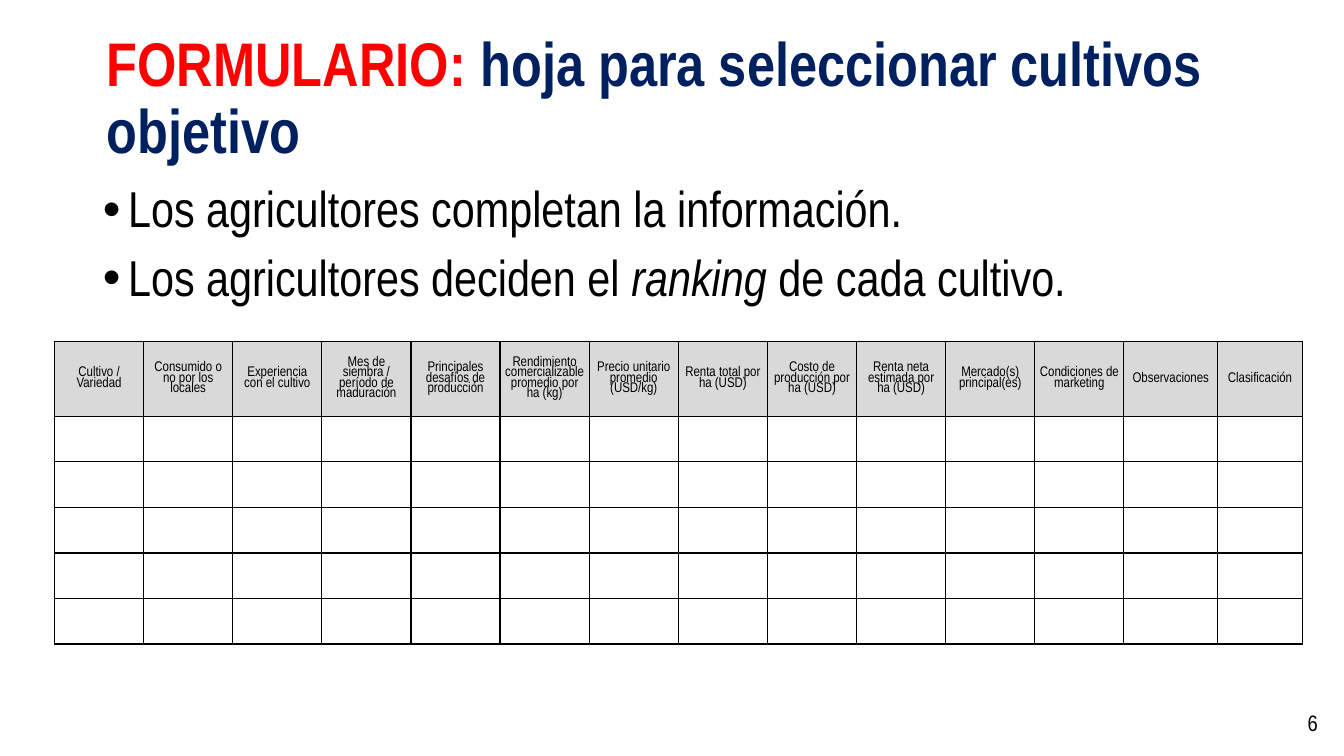
from dataclasses import dataclass

from lxml.etree import SubElement
from pptx import Presentation
from pptx.dml.color import RGBColor
from pptx.enum.text import MSO_ANCHOR, MSO_AUTO_SIZE, PP_ALIGN
from pptx.oxml import parse_xml
from pptx.oxml.ns import nsdecls, qn
from pptx.util import Inches, Pt


@dataclass(frozen=True)
class Theme:
    font: str = "Arial Narrow"
    red: str = "FF0000"
    navy: str = "002060"
    black: str = "000000"
    header_fill: str = "D9D9D9"
    title_size: int = 44
    body_size: int = 36
    number_size: int = 16
    table_size: int = 10
    border_width: int = 1


theme = Theme()


def add_run(p, text, size, color=theme.black, bold=False, italic=False):
    r = p.add_run()
    r.text = text
    r.font.name = theme.font
    r.font.size = Pt(size)
    r.font.color.rgb = RGBColor.from_string(color)
    r.font.bold = bold
    r.font.italic = italic


def set_box(sp, left, top, width, height, anchor):
    """Place a text shape and fix its wrapping and anchoring."""
    sp.left, sp.top = Inches(left), Inches(top)
    sp.width, sp.height = Inches(width), Inches(height)
    tf = sp.text_frame
    tf.word_wrap = True
    tf.auto_size = MSO_AUTO_SIZE.NONE
    tf.vertical_anchor = anchor
    return tf


prs = Presentation()
prs.slide_width, prs.slide_height = Inches(13.33), Inches(7.5)
s = prs.slides.add_slide(prs.slide_layouts[1])

# Title
tf = set_box(s.shapes.title, 0.96, 0.27, 11.5, 1.45, MSO_ANCHOR.MIDDLE)
p = tf.paragraphs[0]
p.alignment = PP_ALIGN.LEFT
p.line_spacing = 0.9
add_run(p, "FORMULARIO: ", theme.title_size, theme.red, bold=True)
add_run(p, "hoja para seleccionar cultivos objetivo", theme.title_size, theme.navy, bold=True)

# Instructions: each bullet is a list of (text, italic)
bullets = [
    [("Los agricultores completan la información.", False)],
    [("Los agricultores deciden el ", False), ("ranking", True), (" de cada cultivo.", False)],
]
tf = set_box(s.placeholders[1], 0.92, 1.78, 11.08, 1.86, MSO_ANCHOR.TOP)
for i, parts in enumerate(bullets):
    p = tf.add_paragraph() if i else tf.paragraphs[0]
    p.line_spacing = 0.9
    p.space_before = Pt(10)
    pPr = p._p.get_or_add_pPr()
    pPr.set("marL", str(Inches(0.25)))
    pPr.set("indent", str(-Inches(0.25)))
    SubElement(pPr, qn("a:buFont"), typeface="Arial")
    SubElement(pPr, qn("a:buChar"), char="•")
    for text, italic in parts:
        add_run(p, text, theme.body_size, italic=italic)

# Crop form
headers = [
    "Cultivo / Variedad",
    "Consumido o no por los locales",
    "Experiencia con el cultivo",
    "Mes de siembra / período de maduración",
    "Principales desafíos de producción",
    "Rendimiento comercializable promedio por ha (kg)",
    "Precio unitario promedio (USD/kg)",
    "Renta total por ha (USD)",
    "Costo de producción por ha (USD)",
    "Renta neta estimada por ha (USD)",
    "Mercado(s) principal(es)",
    "Condiciones de marketing",
    "Observaciones",
    "Clasificación",
]
col_widths = [0.884] * 12 + [0.93, 0.84]
row_heights = [0.74] + [0.452] * 5
table = s.shapes.add_table(
    len(row_heights), len(headers), Inches(0.54), Inches(3.39),
    Inches(sum(col_widths)), Inches(sum(row_heights)),
).table
table.first_row = table.horz_banding = False
for column, width in zip(table.columns, col_widths):
    column.width = Inches(width)
for row, height in zip(table.rows, row_heights):
    row.height = Inches(height)

for cell in table.iter_cells():
    cell.fill.background()
    tcPr = cell._tc.get_or_add_tcPr()
    for i, side in enumerate(("lnL", "lnR", "lnT", "lnB")):
        tcPr.insert(i, parse_xml(
            f'<a:{side} {nsdecls("a")} w="{Pt(theme.border_width)}"><a:solidFill>'
            f'<a:srgbClr val="{theme.black}"/></a:solidFill></a:{side}>'
        ))

for cell, header in zip(table.rows[0].cells, headers):
    cell.fill.solid()
    cell.fill.fore_color.rgb = RGBColor.from_string(theme.header_fill)
    cell.vertical_anchor = MSO_ANCHOR.MIDDLE
    cell.margin_left = cell.margin_right = Inches(0.04)
    cell.margin_top = cell.margin_bottom = 0
    p = cell.text_frame.paragraphs[0]
    p.alignment = PP_ALIGN.CENTER
    p.line_spacing = 0.8
    add_run(p, header, theme.table_size)

# Page number
number_box = s.shapes.add_textbox(0, 0, 0, 0)
tf = set_box(number_box, 10.17, 6.97, 3, 0.4, MSO_ANCHOR.MIDDLE)
p = tf.paragraphs[0]
p.alignment = PP_ALIGN.RIGHT
add_run(p, "6", theme.number_size)

prs.save("out.pptx")
